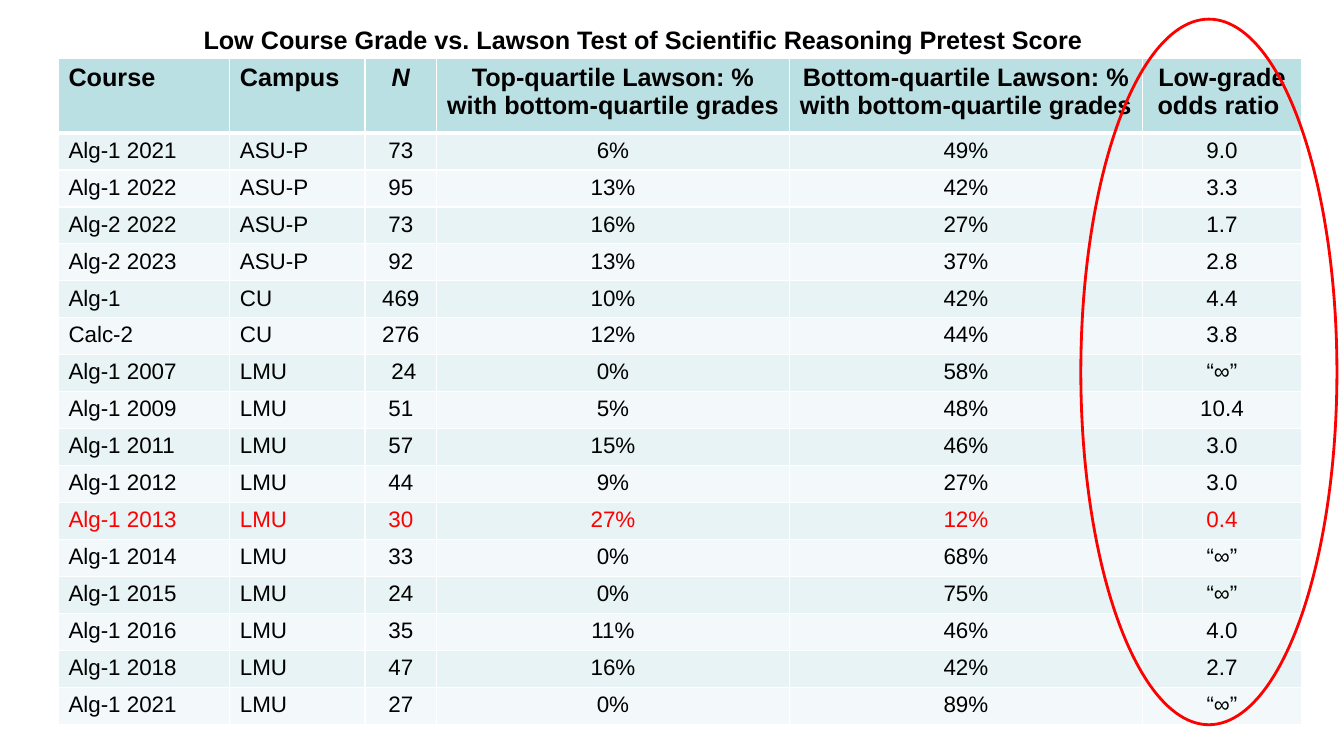
"""Build a slide that compares low course grades with Lawson pretest scores."""
from dataclasses import dataclass
from typing import NamedTuple

from lxml.etree import SubElement
from pptx import Presentation
from pptx.dml.color import RGBColor
from pptx.enum.shapes import MSO_SHAPE
from pptx.enum.text import MSO_AUTO_SIZE, PP_ALIGN
from pptx.oxml.ns import qn
from pptx.slide import Slide
from pptx.table import _Cell as Cell
from pptx.text.text import _Paragraph as Para
from pptx.util import Inches, Pt


@dataclass(frozen=True)
class Theme:
    """Colours, font and sizes of the slide."""
    font: str = "Arial"
    ink: str = "000000"
    red: str = "FF0000"
    rule: str = "FFFFFF"
    head: str = "BBE0E3"
    bands: tuple[str, str] = ("E7F3F4", "F3F9FA")
    large: int = 18
    small: int = 16


class Column(NamedTuple):
    """A table column: its heading, width in inches and alignment."""
    head: str
    width: float
    align: PP_ALIGN = PP_ALIGN.CENTER


class Course(NamedTuple):
    """One course: its name, campus, size, quartile shares and odds ratio."""
    name: str
    campus: str
    count: str
    top: str
    bottom: str
    odds: str


class Box(NamedTuple):
    """A place on the slide, in inches."""
    left: float
    top: float
    width: float
    height: float

    def place(self) -> list[Inches]:
        """Give the four lengths that a shape needs."""
        return [Inches(n) for n in self]


THEME = Theme()
TITLE = "Low Course Grade vs. Lawson Test of Scientific Reasoning Pretest Score"
TITLE_BOX = Box(1.92, 0.19, 9.31, 0.4)
GRID_BOX = Box(0.58, 0.58, 12.33, 6.61)
RING_BOX = Box(10.72, 0.19, 2.54, 7)
HEAD_HEIGHT = 0.74
COLUMNS = [
    Column("Course", 1.7, PP_ALIGN.LEFT),
    Column("Campus", 1.34, PP_ALIGN.LEFT),
    Column("N", 0.71),
    Column("Top-quartile Lawson: % with bottom-quartile grades ", 3.5),
    Column("Bottom-quartile Lawson: % with bottom-quartile grades", 3.5),
    Column("Low-grade odds ratio ", 1.58),
]
COURSES = [
    Course("Alg-1 2021", "ASU-P", "73", "6%", "49%", "9.0"),
    Course("Alg-1 2022", "ASU-P", "95", "13%", "42%", "3.3"),
    Course("Alg-2 2022", "ASU-P", "73", "16%", "27%", "1.7"),
    Course("Alg-2 2023", "ASU-P", "92", "13%", "37%", "2.8"),
    Course("Alg-1", "CU", "469", "10%", "42%", "4.4"),
    Course("Calc-2", "CU", "276", "12%", "44%", "3.8"),
    Course("Alg-1 2007", "LMU", " 24", "0%", "58%", "“∞”"),
    Course("Alg-1 2009", "LMU", "51", "5%", "48%", "10.4"),
    Course("Alg-1 2011", "LMU", "57", "15%", "46%", "3.0"),
    Course("Alg-1 2012", "LMU", "44", "9%", "27%", "3.0"),
    Course("Alg-1 2013", "LMU", "30", "27%", "12%", "0.4"),
    Course("Alg-1 2014", "LMU", "33", "0%", "68%", "“∞”"),
    Course("Alg-1 2015", "LMU", "24", "0%", "75%", "“∞”"),
    Course("Alg-1 2016", "LMU", "35", "11%", "46%", "4.0"),
    Course("Alg-1 2018", "LMU", "47", "16%", "42%", "2.7"),
    Course("Alg-1 2021", "LMU", "27", "0%", "89%", "“∞”"),
]
MARKED = "Alg-1 2013"


def style(para: Para, size: int, color: str, bold: bool) -> None:
    """Set the font of a paragraph."""
    font = para.font
    font.name, font.size, font.bold = THEME.font, Pt(size), bold
    font.color.rgb = RGBColor.from_string(color)


def edge(cell: Cell, side: str, width: int) -> None:
    """Add a border to one side of a cell."""
    line = SubElement(cell._tc.get_or_add_tcPr(), qn(f"a:ln{side}"), w=str(Pt(width)))
    fill = SubElement(line, qn("a:solidFill"))
    SubElement(fill, qn("a:srgbClr"), val=THEME.rule)


def draw_cell(cell: Cell, text: str, col: Column, row: int, color: str) -> None:
    """Write, border and fill one cell."""
    top = row == 0
    cell.text = text
    para = cell.text_frame.paragraphs[0]
    para.alignment = col.align
    style(para, THEME.large if top else THEME.small, color, top)
    if text == "N":
        para.font.italic = True
    for side, width in zip("LRTB", (1, 1, 3 if row == 1 else 1, 3 if top else 1)):
        edge(cell, side, width)
    cell.fill.solid()
    shade = THEME.head if top else THEME.bands[(row - 1) % 2]
    cell.fill.fore_color.rgb = RGBColor.from_string(shade)


def draw_grid(slide: Slide) -> None:
    """Draw the table of courses."""
    lines = [[col.head for col in COLUMNS], *COURSES]
    grid = slide.shapes.add_table(len(lines), len(COLUMNS), *GRID_BOX.place()).table
    for part, col in zip(grid.columns, COLUMNS):
        part.width = Inches(col.width)
    pitch = (GRID_BOX.height - HEAD_HEIGHT) / len(COURSES)
    for row, line in enumerate(lines):
        grid.rows[row].height = Inches(pitch if row else HEAD_HEIGHT)
        color = THEME.red if line[0] == MARKED else THEME.ink
        for cell, text, col in zip(grid.rows[row].cells, line, COLUMNS):
            draw_cell(cell, text, col, row, color)


def draw_title(slide: Slide) -> None:
    """Draw the title above the table."""
    frame = slide.shapes.add_textbox(*TITLE_BOX.place()).text_frame
    frame.word_wrap = True
    frame.auto_size = MSO_AUTO_SIZE.SHAPE_TO_FIT_TEXT
    frame.text = TITLE
    style(frame.paragraphs[0], THEME.large, THEME.ink, True)


def draw_ring(slide: Slide) -> None:
    """Ring the column of odds ratios."""
    ring = slide.shapes.add_shape(MSO_SHAPE.OVAL, *RING_BOX.place())
    ring.shadow.inherit = False
    ring.fill.background()
    ring.line.color.rgb = RGBColor.from_string(THEME.red)
    ring.line.width = Pt(2)


def main() -> None:
    """Build and save the slide."""
    deck = Presentation()
    deck.slide_width, deck.slide_height = Inches(13.33), Inches(7.5)
    slide = deck.slides.add_slide(deck.slide_layouts[6])
    draw_grid(slide)
    draw_title(slide)
    draw_ring(slide)
    deck.save("out.pptx")


if __name__ == "__main__":
    main()
